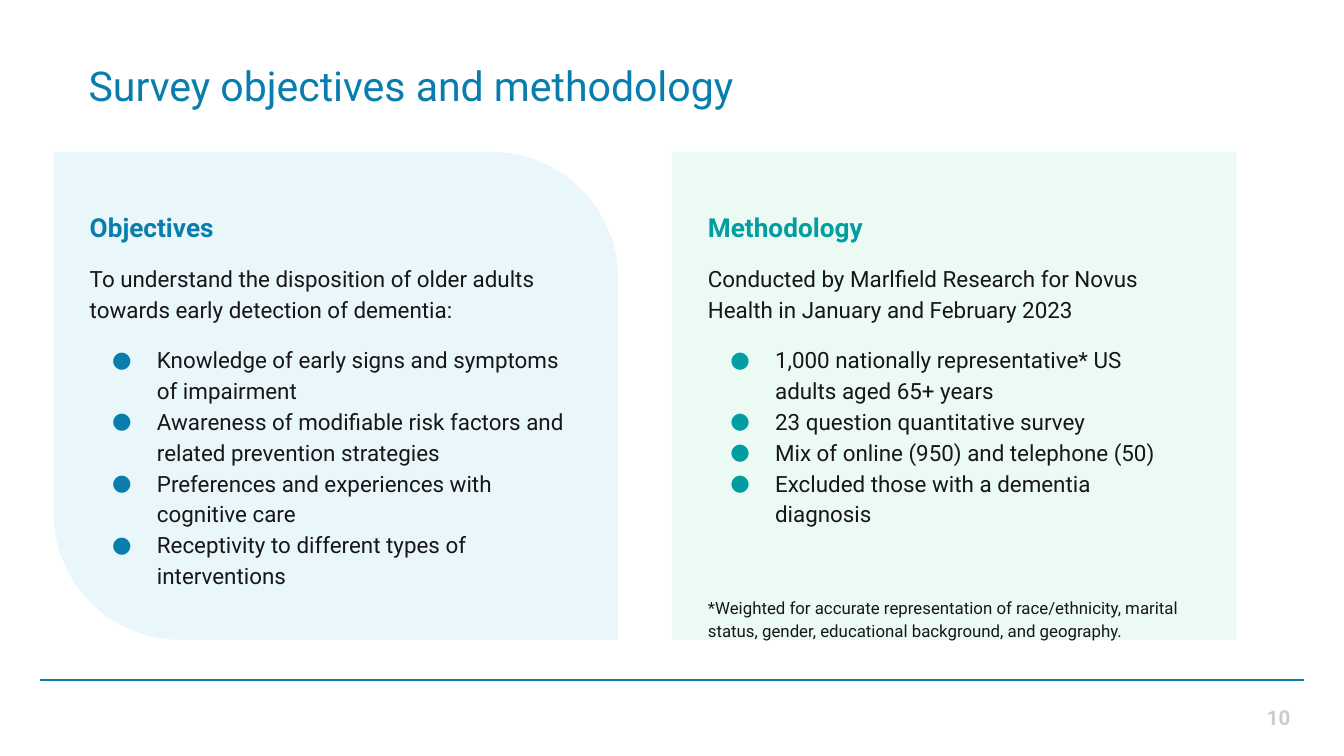
from dataclasses import dataclass

import pptx
import pptx.dml.color
import pptx.enum.shapes
import pptx.enum.text
import pptx.oxml.ns
import pptx.util
from lxml import etree

Pt = pptx.util.Pt
MSO_ANCHOR = pptx.enum.text.MSO_ANCHOR
PP_ALIGN = pptx.enum.text.PP_ALIGN
qn = pptx.oxml.ns.qn

FONT = "Roboto"
BLUE, TEAL, INK, GREY = "087DAE", "009EA1", "171618", "CCCCCC"
PANEL_TOP, PANEL_W, PANEL_H = 81.4, 302.4, 261.4
TEXT_TOP, TEXT_H = 107.3, 238.3


@dataclass
class Panel:
    left: float
    text_left: float
    text_width: float
    corner: float
    fill: str
    accent: str
    heading: str
    intro: str
    bullets: list[str]
    footnote: str = ""


PANELS = [
    Panel(28.8, 41, 279.4, 0.26, "E9F7FB", BLUE, "Objectives",
          "To understand the disposition of older adults towards early detection of dementia:",
          ["Knowledge of early signs and symptoms of impairment",
           "Awareness of modifiable risk factors and related prevention strategies",
           "Preferences and experiences with cognitive care",
           "Receptivity to different types of interventions"]),
    Panel(360, 372.2, 266.4, 0, "ECFAF4", TEAL, "Methodology",
          "Conducted by Marlfield Research for Novus Health in January and February 2023",
          ["1,000 nationally representative* US adults aged 65+ years",
           "23 question quantitative survey",
           "Mix of online (950) and telephone (50)",
           "Excluded those with a dementia diagnosis"],
          "*Weighted for accurate representation of race/ethnicity, marital status, "
          "gender, educational background, and geography."),
]


def rgb(color: str) -> pptx.dml.color.RGBColor:
    return pptx.dml.color.RGBColor.from_string(color)


def style(p, size: float, color: str, bold: bool = False) -> None:
    for r in p.runs:
        r.font.name = FONT
        r.font.size = Pt(size)
        r.font.bold = bold
        r.font.color.rgb = rgb(color)


def add_bullet(p, color: str) -> None:
    pPr = p._p.get_or_add_pPr()
    pPr.set("marL", str(Pt(36)))
    pPr.set("indent", str(Pt(-24)))
    clr = etree.SubElement(pPr, qn("a:buClr"))
    etree.SubElement(clr, qn("a:srgbClr")).set("val", color)
    etree.SubElement(pPr, qn("a:buFont")).set("typeface", FONT)
    etree.SubElement(pPr, qn("a:buChar")).set("char", "●")


def add_text_box(slide, left: float, top: float, width: float, height: float):
    tf = slide.shapes.add_textbox(Pt(left), Pt(top), Pt(width), Pt(height)).text_frame
    tf.word_wrap = True
    return tf


def add_panel(slide, panel: Panel) -> None:
    sp = slide.shapes.add_shape(
        pptx.enum.shapes.MSO_SHAPE.ROUND_2_DIAG_RECTANGLE,
        Pt(panel.left), Pt(PANEL_TOP), Pt(PANEL_W), Pt(PANEL_H))
    sp.adjustments[0] = 0
    sp.adjustments[1] = panel.corner
    sp.shadow.inherit = False
    sp.fill.solid()
    sp.fill.fore_color.rgb = rgb(panel.fill)
    sp.line.fill.background()

    tf = add_text_box(slide, panel.text_left, TEXT_TOP, panel.text_width, TEXT_H)
    p = tf.paragraphs[0]
    p.text = panel.heading
    p.line_spacing = 1.15
    style(p, 14, panel.accent, bold=True)

    def add_paragraph(text: str, size: float = 12, before: float = 0, bullet: bool = False) -> None:
        p = tf.add_paragraph()
        p.text = text
        if bullet:
            add_bullet(p, panel.accent)
        p.line_spacing = 1.15
        p.space_before = Pt(before)
        style(p, size, INK)

    add_paragraph(panel.intro, before=10)
    for i, text in enumerate(panel.bullets):
        add_paragraph(text, before=0 if i else 10, bullet=True)
    if panel.footnote:
        add_paragraph(panel.footnote, size=9, before=36)


def add_title(slide, text: str) -> None:
    sp = slide.shapes.title
    sp.left, sp.top, sp.width, sp.height = Pt(40.3), Pt(28.8), Pt(648), Pt(60.5)
    tf = sp.text_frame
    tf.text = text
    tf.word_wrap = True
    tf.auto_size = pptx.enum.text.MSO_AUTO_SIZE.NONE
    tf.vertical_anchor = MSO_ANCHOR.TOP
    p = tf.paragraphs[0]
    p.alignment = PP_ALIGN.LEFT
    style(p, 22, BLUE)


def add_footer(slide, number: str) -> None:
    rule = slide.shapes.add_connector(
        pptx.enum.shapes.MSO_CONNECTOR.STRAIGHT, Pt(21.6), Pt(364.3), Pt(698.4), Pt(364.3))
    rule.line.color.rgb = rgb(BLUE)
    rule.line.width = Pt(0.75)
    etree.SubElement(rule._element.spPr, qn("a:effectLst"))

    tf = add_text_box(slide, 665.3, 373.7, 33.1, 21.6)
    tf.vertical_anchor = MSO_ANCHOR.MIDDLE
    tf.text = number
    p = tf.paragraphs[0]
    p.alignment = PP_ALIGN.RIGHT
    style(p, 11, GREY, bold=True)


def main() -> None:
    prs = pptx.Presentation()
    prs.slide_width, prs.slide_height = Pt(720), Pt(405)
    slide = prs.slides.add_slide(prs.slide_layouts.get_by_name("Title Only"))
    add_title(slide, "Survey objectives and methodology")
    for panel in PANELS:
        add_panel(slide, panel)
    add_footer(slide, "10")
    prs.save("out.pptx")


if __name__ == "__main__":
    main()
